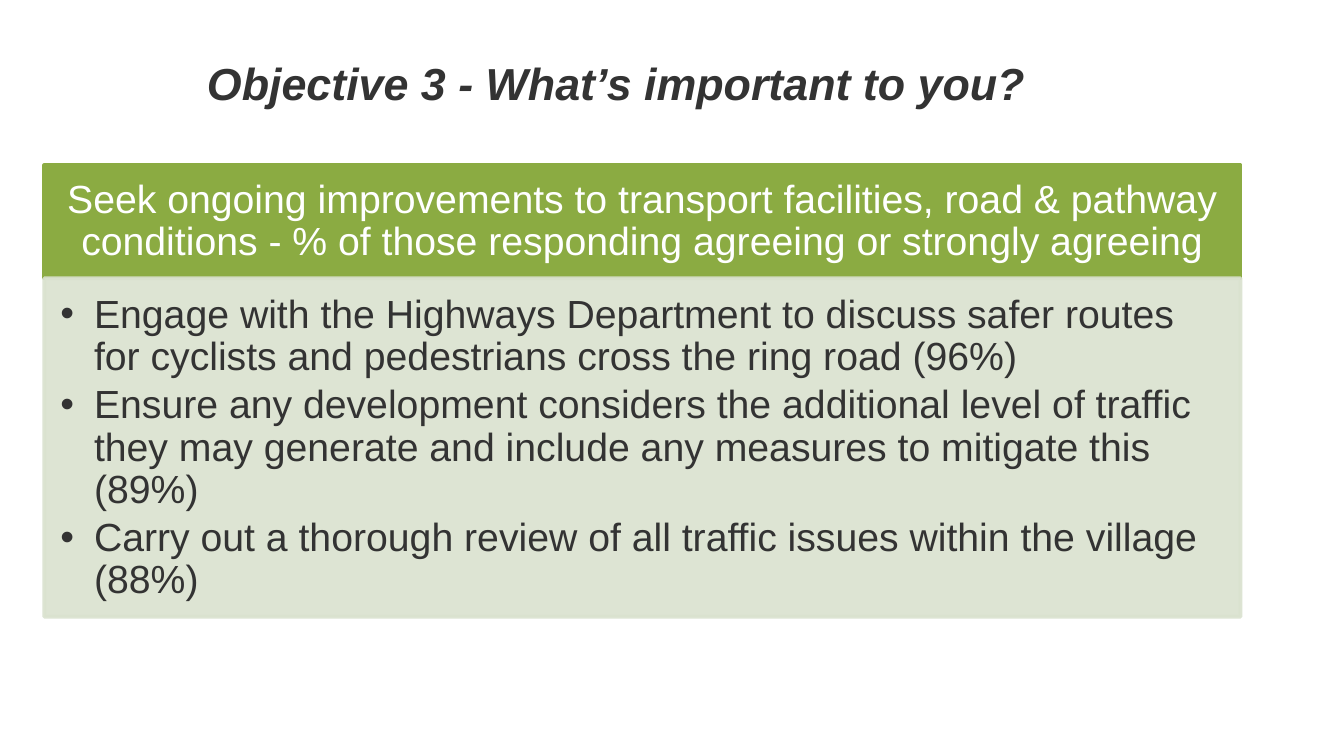
from lxml import etree
from pptx import Presentation
from pptx import util as u
from pptx.dml.color import RGBColor
from pptx.enum import shapes, text
from pptx.oxml.ns import qn

# Content
TITLE = "Objective 3 - What’s important to you? "
HEADING = ("Seek ongoing improvements to transport facilities, road & pathway "
           "conditions - % of those responding agreeing or strongly agreeing")
ACTIONS = [
    "Engage with the Highways Department to discuss safer routes for cyclists "
    "and pedestrians cross the ring road (96%)",
    "Ensure any development considers the additional level of traffic they may "
    "generate and include any measures to mitigate this (89%)",
    "Carry out a thorough review of all traffic issues within the village (88%)",
]

# Style and layout, in inches
FONT, DARK, WHITE, GREEN, PALE = "Arial", "333333", "FFFFFF", "8BAB42", "DAE2CF"
SLIDE_W = 10
SLIDE_H = SLIDE_W * 9 / 16
LEFT, TOP, WIDTH = 0.33, 1.23, 8.9
HEADING_H, ACTIONS_H = 0.84, 2.52
INDENT = 0.25
BODY_SIZE = 21


def rgb(value):
    return RGBColor.from_string(value)


def write(shape, lines, size, color, align, insets, anchor):
    frame = shape.text_frame
    frame.word_wrap = True
    frame.vertical_anchor = anchor
    (frame.margin_left, frame.margin_top,
     frame.margin_right, frame.margin_bottom) = map(u.Inches, insets)
    for i, line in enumerate(lines):
        para = frame.add_paragraph() if i else frame.paragraphs[0]
        para.text = line
        para.alignment = align
        para.font.name, para.font.size = FONT, u.Pt(size)
        para.font.color.rgb = rgb(color)
    return frame.paragraphs


def add_panel(top, height, color, opacity=100):
    panel = slide.shapes.add_shape(
        shapes.MSO_SHAPE.RECTANGLE, *map(u.Inches, (LEFT, top, WIDTH, height)))
    panel.shadow.inherit = False
    panel.fill.solid()
    panel.fill.fore_color.rgb = rgb(color)
    panel.line.color.rgb = rgb(color)
    panel.line.width = u.Pt(2)
    if opacity < 100:
        for tint in panel.element.spPr.iter(qn("a:srgbClr")):
            etree.SubElement(tint, qn("a:alpha"), val=str(opacity * 1000))
    return panel


def add_bullet(para):
    props = para._p.get_or_add_pPr()
    props.set("marL", str(u.Inches(INDENT)))
    props.set("indent", str(-u.Inches(INDENT)))
    # Bullet elements come before the paragraph's run defaults
    run_defaults = props.find(qn("a:defRPr"))
    etree.SubElement(props, qn("a:buFont"), typeface=FONT)
    etree.SubElement(props, qn("a:buChar"), char="•")
    props.append(run_defaults)


prs = Presentation()
prs.slide_width, prs.slide_height = u.Inches(SLIDE_W), u.Inches(SLIDE_H)
slide = prs.slides.add_slide(prs.slide_layouts[6])

# Title
title = slide.shapes.add_textbox(*map(u.Inches, (0.13, 0.36, 9, 0.57)))
for para in write(title, [TITLE], 24, DARK, text.PP_ALIGN.CENTER,
                  (0.1, 0.05, 0.1, 0.11), text.MSO_ANCHOR.MIDDLE):
    para.font.bold = para.font.italic = True

# Heading band
heading = add_panel(TOP, HEADING_H, GREEN)
for para in write(heading, [HEADING], BODY_SIZE, WHITE, text.PP_ALIGN.CENTER,
                  (0.16, 0.09, 0.16, 0.09), text.MSO_ANCHOR.MIDDLE):
    para.line_spacing = 0.9

# Action list
actions = add_panel(TOP + HEADING_H, ACTIONS_H, PALE, opacity=90)
for para in write(actions, ACTIONS, BODY_SIZE, DARK, text.PP_ALIGN.LEFT,
                  (0.12, 0.12, 0.16, 0.18), text.MSO_ANCHOR.TOP):
    para.line_spacing = 0.9
    para.space_after = u.Pt(BODY_SIZE * 0.15)
    add_bullet(para)

prs.save("out.pptx")
